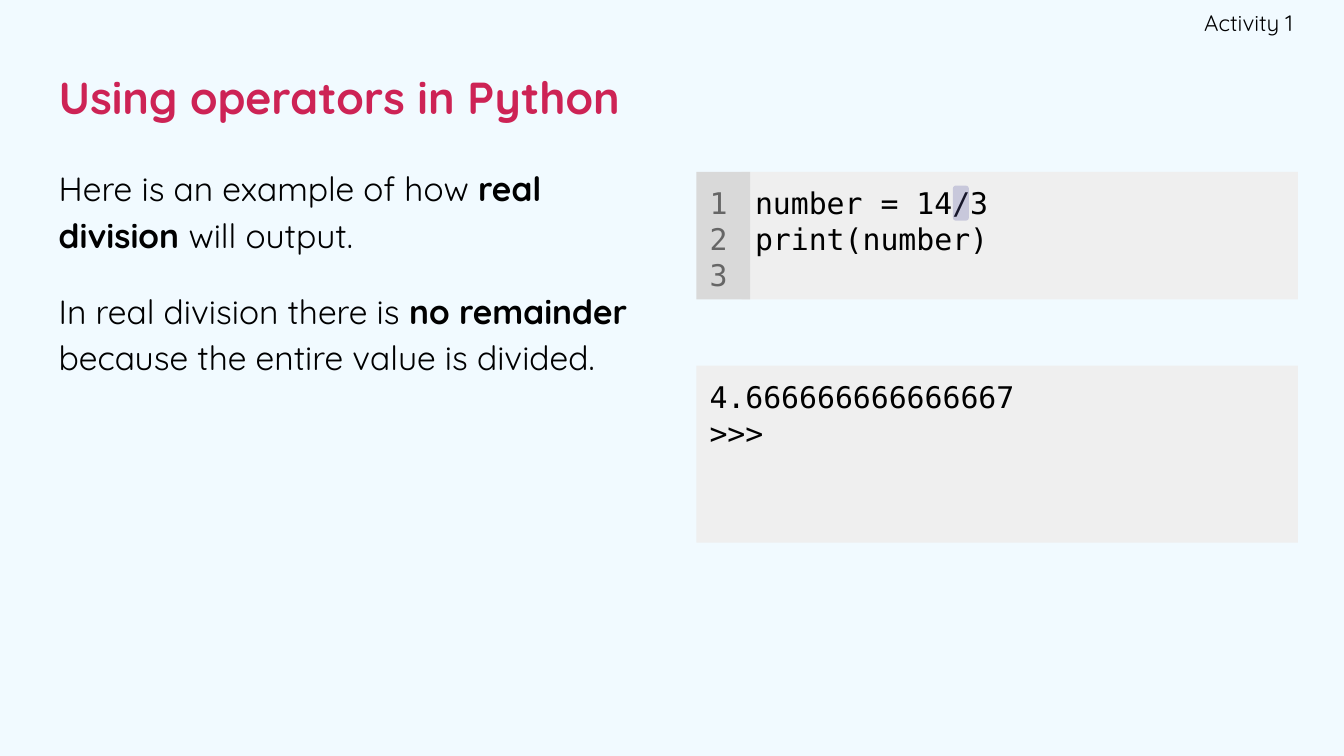
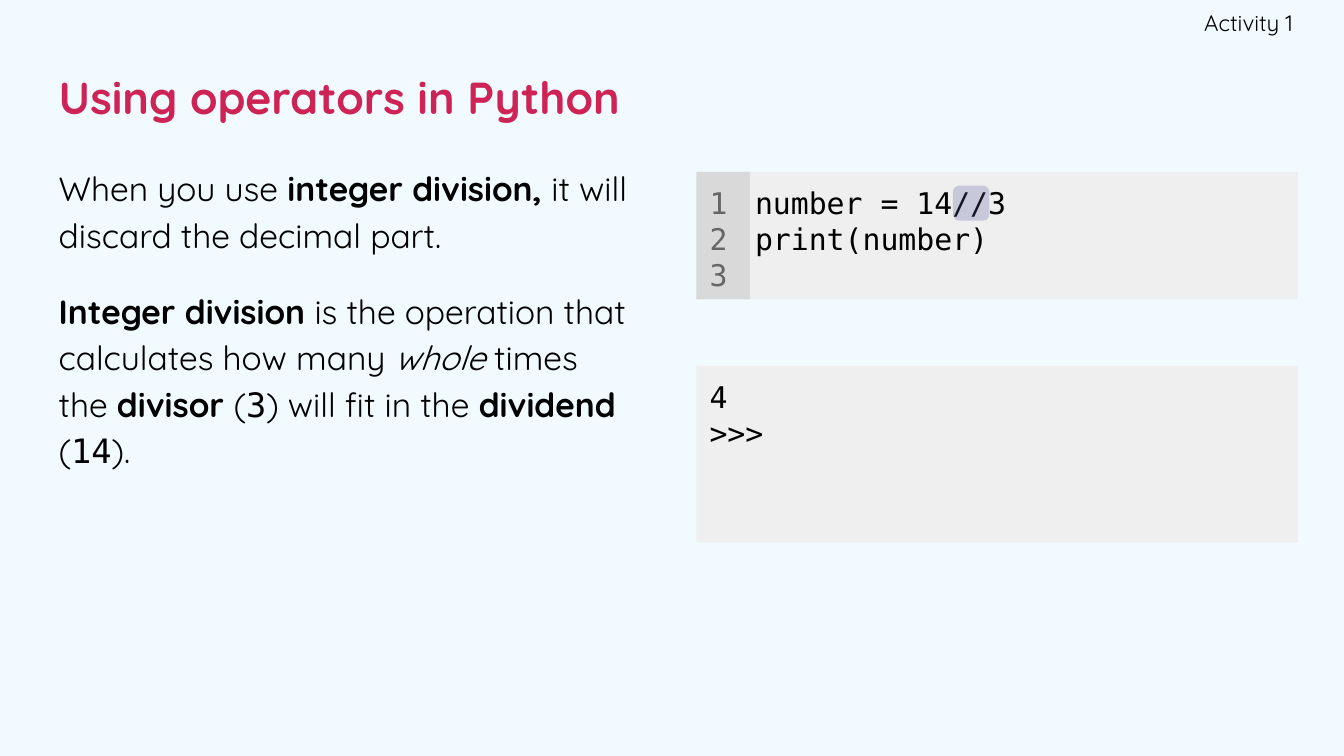
from lxml import etree
from pptx import Presentation
from pptx import util as u
from pptx.dml.color import RGBColor
from pptx.enum import shapes, text
from pptx.oxml import ns

SKY = RGBColor(0xF1, 0xFA, 0xFF)
PINK = RGBColor(0xCD, 0x23, 0x55)
BLACK = RGBColor(0, 0, 0)
PALE = RGBColor(0xEF, 0xEF, 0xEF)
GREY = RGBColor(0xD9, 0xD9, 0xD9)
DARK = RGBColor(0x66, 0x66, 0x66)
MARK = RGBColor(0x5B, 0x5B, 0xA5)

SANS = "Quicksand"
MONO = "DejaVu Sans Mono"
PAD = 0.25
LEFT, RIGHT = 0.86, 24.53
PANEL = 13.16
TOP = 3.25


class Deck:
    def __init__(self):
        self.prs = Presentation()
        self.prs.slide_width = u.Cm(25.4)
        self.prs.slide_height = u.Cm(14.29)
        fill = self.prs.slide_master.background.fill
        fill.solid()
        fill.fore_color.rgb = SKY
        self.slide = None

    def start(self):
        self.slide = self.prs.slides.add_slide(self.prs.slide_layouts[5])

    def fit(self, shape, anchor=text.MSO_ANCHOR.TOP, right=PAD):
        tf = shape.text_frame
        tf.word_wrap = True
        tf.auto_size = text.MSO_AUTO_SIZE.NONE
        tf.vertical_anchor = anchor
        tf.margin_left = tf.margin_top = tf.margin_bottom = u.Cm(PAD)
        tf.margin_right = u.Cm(right)
        return tf

    def put(self, par, words, size, color=BLACK, face=SANS, style=""):
        run = par.add_run()
        run.text = words
        font = run.font
        font.name = face
        font.size = u.Pt(size)
        font.color.rgb = color
        font.bold = style == "b"
        font.italic = style == "i"

    def title(self, words):
        shape = self.slide.shapes.title
        shape.left, shape.top = u.Cm(LEFT), u.Cm(LEFT)
        shape.width, shape.height = u.Cm(RIGHT - LEFT), u.Cm(1.93)
        par = self.fit(shape, text.MSO_ANCHOR.MIDDLE).paragraphs[0]
        par.alignment = text.PP_ALIGN.LEFT
        self.put(par, words, 24, PINK, style="b")

    def label(self, words):
        box = self.slide.shapes.add_textbox(
            u.Cm(19), 0, u.Cm(5.44), u.Cm(0.86))
        par = self.fit(box, text.MSO_ANCHOR.MIDDLE, 0).paragraphs[0]
        par.alignment = text.PP_ALIGN.RIGHT
        self.put(par, words, 12)

    def body(self, pars):
        box = self.slide.shapes.add_textbox(
            u.Cm(LEFT), u.Cm(2.82), u.Cm(11.38), u.Cm(10.16))
        tf = self.fit(box)
        for i, runs in enumerate(pars):
            par = tf.add_paragraph() if i else tf.paragraphs[0]
            par.line_spacing = 1.15
            if i:
                par.space_before = par.space_after = u.Pt(16)
            for words, style in runs:
                face = MONO if style == "m" else SANS
                self.put(par, words, 18, face=face, style=style)

    def block(self, x, y, w, h, fill, kind=shapes.MSO_SHAPE.RECTANGLE):
        shape = self.slide.shapes.add_shape(
            kind, u.Cm(x), u.Cm(y), u.Cm(w), u.Cm(h))
        shape.shadow.inherit = False
        shape.fill.solid()
        shape.fill.fore_color.rgb = fill
        shape.line.fill.background()
        return shape

    def panel(self, x, y, w, h, lines, fill=PALE, color=BLACK):
        tf = self.fit(self.block(x, y, w, h, fill))
        for i, line in enumerate(lines):
            par = tf.add_paragraph() if i else tf.paragraphs[0]
            par.alignment = text.PP_ALIGN.LEFT
            self.put(par, line, 16, color, MONO)

    def editor(self, sign):
        x = PANEL + 0.86
        self.panel(x, TOP, RIGHT - x, 2.41,
                   [f"number = 14{sign}3", "print(number)"])
        self.panel(PANEL, TOP, 1.02, 2.41, "123", GREY, DARK)

    def output(self, value):
        self.panel(PANEL, 6.91, RIGHT - PANEL, 3.35, [value, ">>>"])

    def marker(self, width):
        shape = self.block(18.01, 3.51, width, 0.66, MARK,
                           shapes.MSO_SHAPE.ROUNDED_RECTANGLE)
        shape.adjustments[0] = 0.17
        tint = next(shape.element.iter(ns.qn("a:srgbClr")))
        etree.SubElement(tint, ns.qn("a:alpha"), val="26000")


REAL = [
    [("Here is an example of how ", ""), ("real division ", "b"),
     ("will output.", "")],
    [("In real division there is ", ""), ("no remainder", "b"),
     (" because the entire value is divided.", "")],
]
WHOLE = [
    [("When you use ", ""), ("integer division, ", "b"),
     ("it will discard the decimal part.", "")],
    [("Integer division", "b"),
     (" is the operation that calculates how many ", ""),
     ("whole ", "i"), ("times the ", ""), ("divisor ", "b"),
     ("(", ""), ("3", "m"), (") will fit in the ", ""),
     ("dividend ", "b"), ("(", ""), ("14", "m"), (").", "")],
]


def main():
    deck = Deck()
    for pars, sign, value, width in [
        (REAL, "/", "4.666666666666667", 0.3),
        (WHOLE, "//", "4", 0.69),
    ]:
        deck.start()
        deck.title("Using operators in Python")
        deck.body(pars)
        deck.label("Activity 1")
        deck.editor(sign)
        deck.output(value)
        deck.marker(width)
    deck.prs.save("out.pptx")


if __name__ == "__main__":
    main()
